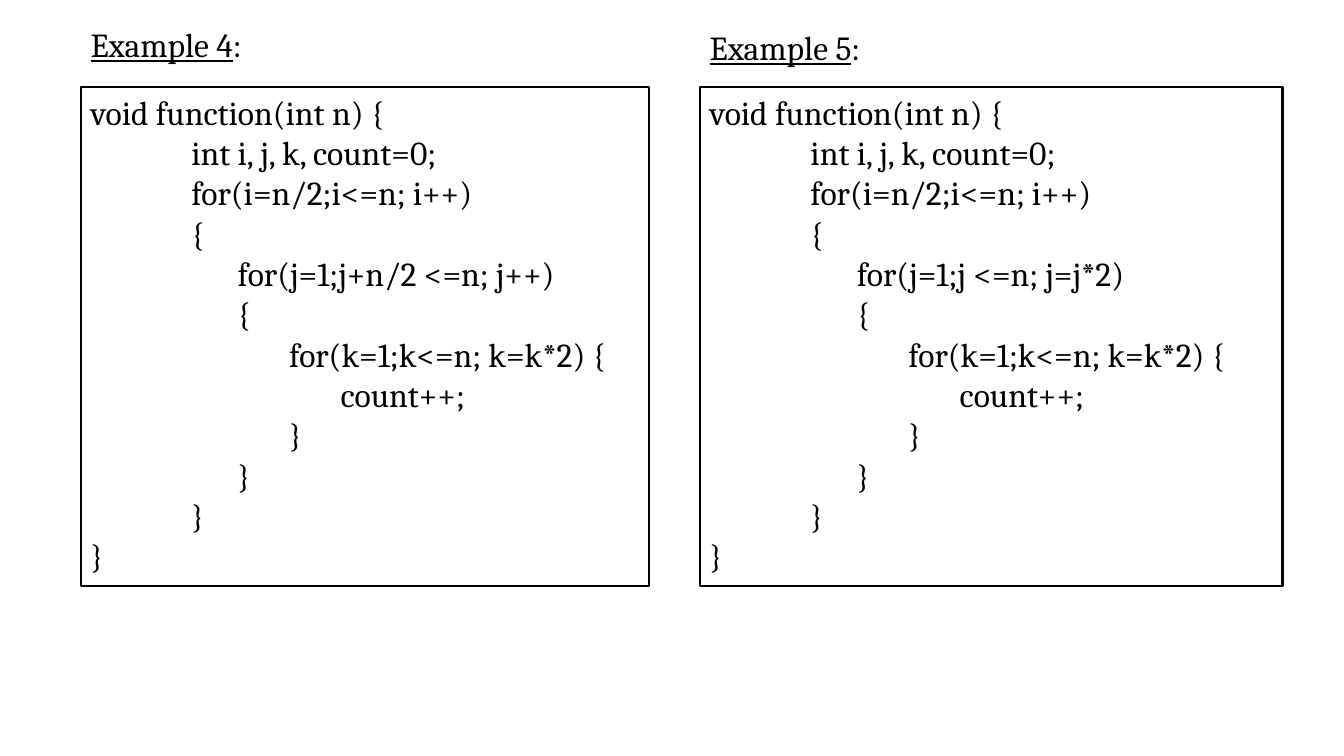
from pptx import Presentation
from pptx.dml.color import RGBColor
from pptx.enum.shapes import MSO_SHAPE
from pptx.enum.text import MSO_ANCHOR, PP_ALIGN
from pptx.util import Inches, Pt

RECTANGLE = MSO_SHAPE.RECTANGLE
TOP = MSO_ANCHOR.TOP
LEFT = PP_ALIGN.LEFT

THEME = {
    "font": "Cambria",
    "size": Pt(24),
    "ink": RGBColor(0, 0, 0),
    "border": Pt(1.5),
}
INDENTS = [Inches(x) for x in (0, 1, 1.46, 1.97, 2.48)]
EXAMPLES = [
    ("Example 4", 0.8, 0.19, 5.64, "for(j=1;j+n/2 <=n; j++)"),
    ("Example 5", 6.94, 0.22, 5.78, "for(j=1;j <=n; j=j*2)"),
]


def add_text(paragraph, text, underline=False):
    run = paragraph.add_run()
    run.text = text
    run.font.name = THEME["font"]
    run.font.size = THEME["size"]
    run.font.color.rgb = THEME["ink"]
    run.font.underline = underline


prs = Presentation()
prs.slide_width = Inches(13.33)
prs.slide_height = Inches(7.5)
slide = prs.slides.add_slide(prs.slide_layouts[6])

for title, left, title_top, code_width, middle_loop in EXAMPLES:
    code_lines = [
        (0, "void function(int n) {"),
        (1, "int i, j, k, count=0;"),
        (1, "for(i=n/2;i<=n; i++)"),
        (1, "{"),
        (2, middle_loop),
        (2, "{"),
        (3, "for(k=1;k<=n; k=k*2) {"),
        (4, "count++;"),
        (3, "}"),
        (2, "}"),
        (1, "}"),
        (0, "}"),
    ]
    code = slide.shapes.add_shape(
        RECTANGLE, Inches(left), Inches(0.86), Inches(code_width), Inches(4.95)
    )
    code.shadow.inherit = False
    code.fill.background()
    code.line.color.rgb = THEME["ink"]
    code.line.width = THEME["border"]
    code.text_frame.word_wrap = True
    code.text_frame.vertical_anchor = TOP
    for number, (depth, text) in enumerate(code_lines):
        line = code.text_frame.add_paragraph() if number else code.text_frame.paragraphs[0]
        line.alignment = LEFT
        properties = line._p.get_or_add_pPr()
        properties.set("marL", str(INDENTS[depth]))
        properties.set("indent", "0")
        add_text(line, text)

    heading = slide.shapes.add_textbox(
        Inches(left), Inches(title_top), Inches(1.81), Inches(0.5)
    )
    heading.text_frame.word_wrap = True
    add_text(heading.text_frame.paragraphs[0], title, underline=True)
    add_text(heading.text_frame.paragraphs[0], ":")

prs.save("out.pptx")
